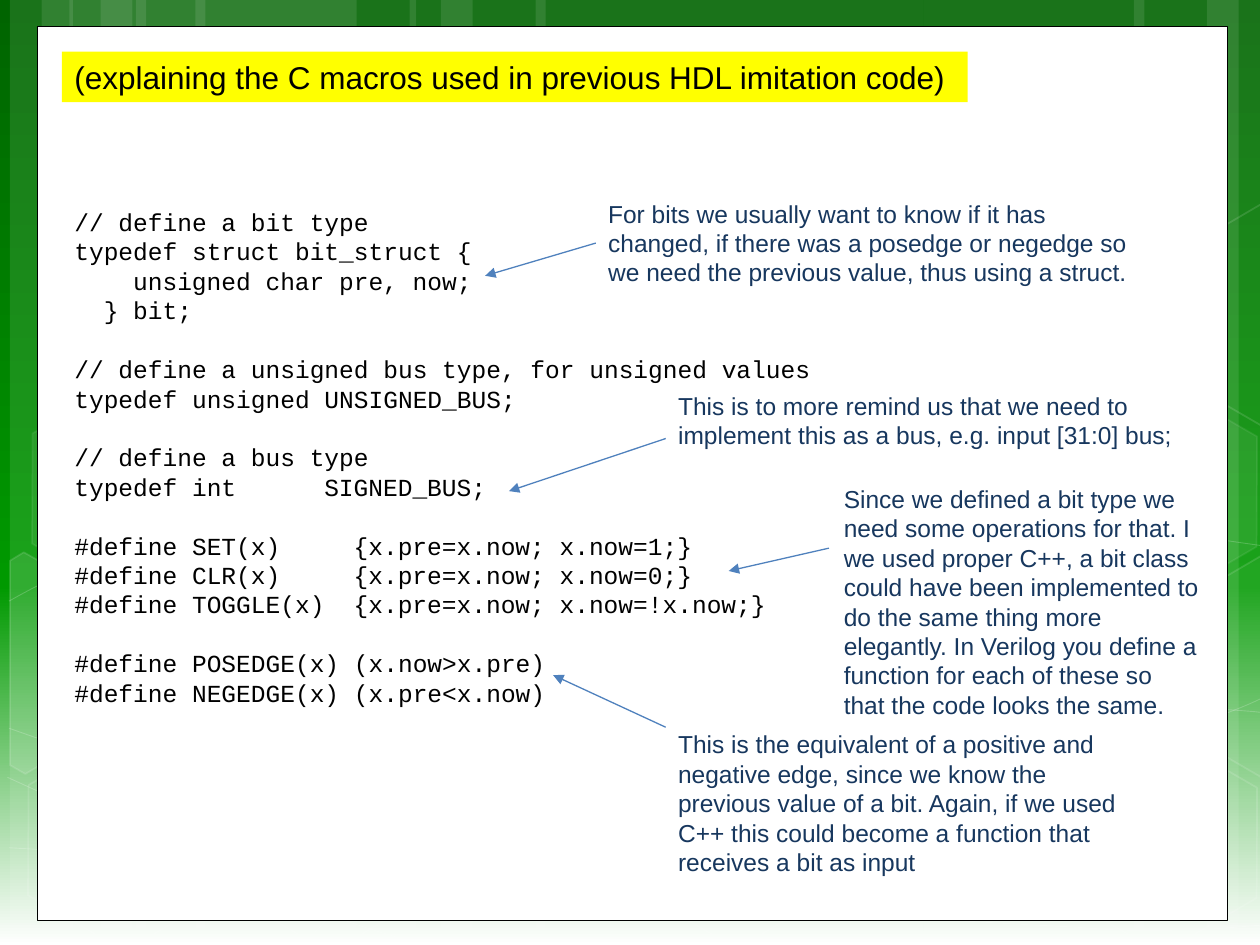
from copy import deepcopy
from dataclasses import dataclass
from math import cos, radians, sin

from lxml.etree import SubElement
from pptx import Presentation
from pptx.dml.color import RGBColor
from pptx.enum.shapes import MSO_CONNECTOR as Connector, MSO_SHAPE as Preset
from pptx.enum.text import MSO_ANCHOR as Anchor, PP_ALIGN as Align
from pptx.oxml.ns import qn
from pptx.util import Cm, Pt

Point = tuple[float, float]
WHITE, BLACK, YELLOW = "FFFFFF", "000000", "FFFF00"
NAVY, BLUE = "17375E", "4F81BD"
GRADIENT = [(0, "006400"), (0.62, "009900"), (1, WHITE)]
LINE_HEIGHT = 16.8
LETTER_WIDTH = 8.4
TILT = 30


@dataclass
class Hexagon:
    left: float
    top: float
    fill_alpha: int
    line_alpha: int


@dataclass
class Edge:
    points: list[Point]
    center: Point
    fill_alpha: int


@dataclass
class Code:
    text: str
    gap: bool = False
    indent: int = 0
    tail: str = ""
    column: int = 0


@dataclass
class Note:
    text: str
    place: tuple[float, float, float, float]
    start: Point
    end: Point


BANDS = [
    (2.74, 4.45), (0.2, 1.27), (0.84, 2.11), (3.94, 4.45), (1.4, 1.27), (2.03, 2.11),
    (18.62, 4.45), (24.33, 1.27), (22.86, 2.11), (10.8, 7.82), (8.26, 1.27), (8.89, 2.11),
]
CURVES = [
    [(0.18, 17.09), (1.55, 17.17), (2.92, 17.25), (4.83, 17.22), (6.73, 17.2), (9.09, 17.09),
     (11.63, 16.89), (14.17, 16.64), (17.78, 16.15), (20.12, 15.67), (22.43, 15.19),
     (24.82, 14.43), (25.58, 14)],
    [(0.18, 12.12), (0.91, 11.71), (1.65, 11.33), (3.07, 10.95), (4.52, 10.52), (6.58, 10.01),
     (8.81, 9.83), (11.07, 9.65), (13.82, 9.63), (16.61, 9.83), (19.41, 10.03),
     (24.05, 10.82), (25.58, 11.02)],
    [(0.15, 15.67), (3.23, 17.07), (6.27, 18.47), (8.48, 19.02)],
    [(0.18, 14.68), (0.97, 14.96), (1.78, 15.24), (3.25, 15.65), (4.72, 16.03), (6.93, 16.66),
     (9.07, 17.09), (11.18, 17.53), (13.84, 17.98), (15.95, 18.24), (18.06, 18.52),
     (20.32, 18.62), (21.67, 18.69), (22.99, 18.8), (23.34, 18.75), (24, 18.75),
     (24.66, 18.72), (25.12, 18.67), (25.58, 18.64)],
    [(6.15, 19.02), (6.6, 18.52), (7.06, 18.01), (7.67, 17.55), (8.28, 17.09), (9.14, 16.59),
     (9.86, 16.23), (10.57, 15.88), (11, 15.72), (11.94, 15.47), (12.85, 15.21),
     (14.55, 14.86), (15.44, 14.68), (16.36, 14.5), (16.48, 14.5), (17.27, 14.45),
     (18.06, 14.38), (19.3, 14.3), (20.17, 14.27), (21.06, 14.25), (22.5, 14.27),
     (22.5, 14.27), (23.07, 14.27), (23.64, 14.27), (24.21, 14.27), (24.66, 14.3),
     (25.1, 14.33), (25.32, 14.35), (25.55, 14.38), (25.48, 14.35), (25.55, 14.38)],
]
HEXAGONS = [
    Hexagon(8.48, 0.91, 4, 8), Hexagon(12.62, 14.96, 6, 12), Hexagon(0.28, 15.01, 0, 12),
    Hexagon(0.36, 7.92, 7, 8), Hexagon(4.42, 15.04, 0, 12), Hexagon(21.18, 15.06, 0, 12),
    Hexagon(21.18, 7.98, 7, 8),
]
LEFT_SIDE = [(0.2, 11.3), (0.48, 11.13), (2.44, 12.24), (2.41, 14.48), (0.51, 15.6), (0.2, 15.42)]
RIGHT_SIDE = [(23.52, 12.32), (25.43, 11.2), (25.63, 11.33), (25.63, 15.57), (25.45, 15.67),
              (23.52, 14.55)]
UPPER_SIDE = [(x, y - 7.09) for x, y in RIGHT_SIDE]
EDGES = [
    Edge(LEFT_SIDE, (0.91, 13.59), 10),
    Edge(RIGHT_SIDE, (25.02, 13.21), 4),
    Edge(UPPER_SIDE, (25.02, 6.12), 0),
]
CODE = [
    Code("// define a bit type"),
    Code("typedef struct bit_struct {"),
    Code("unsigned char pre, now;", indent=4),
    Code("} bit;", indent=2),
    Code("// define a unsigned bus type, for unsigned values", gap=True),
    Code("typedef unsigned UNSIGNED_BUS;"),
    Code("// define a bus type", gap=True),
    Code("typedef int", tail="SIGNED_BUS;", column=17),
    Code("#define SET(x)", gap=True, tail="{x.pre=x.now; x.now=1;}", column=19),
    Code("#define CLR(x)", tail="{x.pre=x.now; x.now=0;}", column=19),
    Code("#define TOGGLE(x)", tail="{x.pre=x.now; x.now=!x.now;}", column=19),
    Code("#define POSEDGE(x) (x.now>x.pre)", gap=True),
    Code("#define NEGEDGE(x) (x.pre<x.now)"),
]
NOTES = [
    Note("For bits we usually want to know if it has changed, if there was a posedge or negedge "
         "so we need the previous value, thus using a struct.",
         (12.01, 3.88, 11.02, 2.06), (12.01, 4.9), (9.78, 5.56)),
    Note("This is to more remind us that we need to implement this as a bus, e.g. input [31:0] "
         "bus;", (13.42, 7.75, 11.02, 1.45), (13.42, 8.84), (10.26, 9.9)),
    Note("Since we defined a bit type we need some operations for that. I we used proper C++, a "
         "bit class could have been implemented to do the same thing more elegantly. In Verilog "
         "you define a function for each of these so that the code looks the same.",
         (16.76, 9.63, 7.67, 5.05), (16.71, 11.05), (14.69, 11.51)),
    Note("This is the equivalent of a positive and negative edge, since we know the previous "
         "value of a bit. Again, if we used C++ this could become a function that receives a bit "
         "as input", (13.42, 14.58, 9.91, 3.25), (13.42, 14.66), (11.15, 13.61)),
]


def color(value: str) -> RGBColor:
    return RGBColor.from_string(value)


def lengths(values) -> list:
    return [Cm(value) for value in values]


def paint(fill, parent, value: str, alpha: int) -> None:
    if not alpha:
        fill.background()
        return
    fill.solid()
    fill.fore_color.rgb = color(value)
    if alpha < 100:
        tint = parent.find(qn("a:solidFill"))[0]
        SubElement(tint, qn("a:alpha"), val=str(alpha * 1000))


def style(shape, fill=WHITE, fill_alpha=100, line=WHITE, line_alpha=0, width=1) -> None:
    shape.shadow.inherit = False
    properties = shape.element.spPr
    paint(shape.fill, properties, fill, fill_alpha)
    shape.line.width = Pt(width)
    paint(shape.line.fill, properties.find(qn("a:ln")), line, line_alpha)


def draw_outline(page, points: list[Point], close: bool):
    start, *rest = [lengths(point) for point in points]
    builder = page.shapes.build_freeform(*start)
    builder.add_line_segments(rest, close=close)
    return builder.convert_to_shape()


def draw_curve(page, knots: list[Point]) -> None:
    shape = draw_outline(page, knots, False)
    segments = list(shape.element.iter(qn("a:lnTo")))
    outline = segments[0].getparent()
    for first in range(0, len(segments), 3):
        bend = SubElement(outline, qn("a:cubicBezTo"))
        for segment in segments[first:first + 3]:
            bend.append(segment[0])
            outline.remove(segment)
    style(shape, fill_alpha=0, line_alpha=20, width=0.5)


def draw_edge(page, edge: Edge) -> None:
    across, down = cos(radians(TILT)), sin(radians(TILT))
    middle_x, middle_y = edge.center
    offsets = [(x - middle_x, y - middle_y) for x, y in edge.points]
    upright = [(middle_x + x * across + y * down, middle_y - x * down + y * across)
               for x, y in offsets]
    shape = draw_outline(page, upright, True)
    shape.rotation = TILT
    style(shape, fill_alpha=edge.fill_alpha, line_alpha=12)


def write(para, text: str, font: str, size: int, ink: str) -> None:
    para.alignment = Align.LEFT
    span = para.add_run()
    span.text = text
    for name, value in {"name": font, "size": Pt(size)}.items():
        setattr(span.font, name, value)
    span.font.color.rgb = color(ink)


def draw_code(page, rows: list[Code]) -> None:
    frame = page.shapes.add_textbox(*lengths((1.25, 4.05, 20.17, 10.44))).text_frame
    frame.word_wrap = True
    for index, row in enumerate(rows):
        para = frame.add_paragraph() if index else frame.paragraphs[0]
        write(para, "\t".join(filter(None, (row.text, row.tail))), "Courier New", 14, BLACK)
        para.space_before = Pt(LINE_HEIGHT if row.gap else 0)
        settings = para._p.get_or_add_pPr()
        if row.indent:
            settings.set("marL", str(Pt(row.indent * LETTER_WIDTH)))
        if row.tail:
            stops = SubElement(settings, qn("a:tabLst"))
            SubElement(stops, qn("a:tab"), pos=str(Pt(row.column * LETTER_WIDTH)), algn="l")


def draw_note(page, note: Note) -> None:
    arrow = page.shapes.add_connector(Connector.STRAIGHT, *lengths(note.start + note.end))
    arrow.line.width = Pt(0.75)
    arrow.line.color.rgb = color(BLUE)
    SubElement(arrow.line._get_or_add_ln(), qn("a:tailEnd"), type="triangle")
    SubElement(arrow._element.spPr, qn("a:effectLst"))
    frame = page.shapes.add_textbox(*lengths(note.place)).text_frame
    frame.word_wrap = True
    write(frame.paragraphs[0], note.text, "Arial", 14, NAVY)


def draw_backdrop(page) -> None:
    fill = page.background.fill
    fill.gradient()
    fill.gradient_angle = 270
    last = list(page.element.iter(qn("a:gs")))[-1]
    last.addnext(deepcopy(last))
    for stop, (position, value) in zip(fill.gradient_stops, GRADIENT):
        stop.position = position
        stop.color.rgb = color(value)
    for left, width in BANDS:
        band = page.shapes.add_shape(Preset.RECTANGLE, *lengths((left, 0, width, 19.05)))
        style(band, fill_alpha=10)
    for knots in CURVES:
        draw_curve(page, knots)
    for item in HEXAGONS:
        shape = page.shapes.add_shape(Preset.HEXAGON, *lengths((item.left, item.top, 4.45, 3.86)))
        shape.adjustments[0], shape.adjustments[1] = 0.285, 1.155
        shape.rotation = TILT
        style(shape, fill_alpha=item.fill_alpha, line_alpha=item.line_alpha)
    for edge in EDGES:
        draw_edge(page, edge)
    panel = page.shapes.add_shape(Preset.RECTANGLE, *lengths((0.76, 0.53, 23.98, 18.02)))
    style(panel, line=BLACK, line_alpha=100, width=0.5)


def draw_title(page) -> None:
    box = page.shapes.add_shape(Preset.RECTANGLE, *lengths((1.25, 1.04, 18.26, 1.02)))
    style(box, fill=YELLOW)
    frame = box.text_frame
    for name, value in {"word_wrap": False, "vertical_anchor": Anchor.TOP}.items():
        setattr(frame, name, value)
    title = "(explaining the C macros used in previous HDL imitation code)"
    write(frame.paragraphs[0], title, "Arial", 18, BLACK)


deck = Presentation()
deck.slide_width, deck.slide_height = Cm(25.4), Cm(19.05)
page = deck.slides.add_slide(deck.slide_layouts[6])
draw_backdrop(page)
draw_title(page)
draw_code(page, CODE)
for note in NOTES:
    draw_note(page, note)
deck.save("out.pptx")
